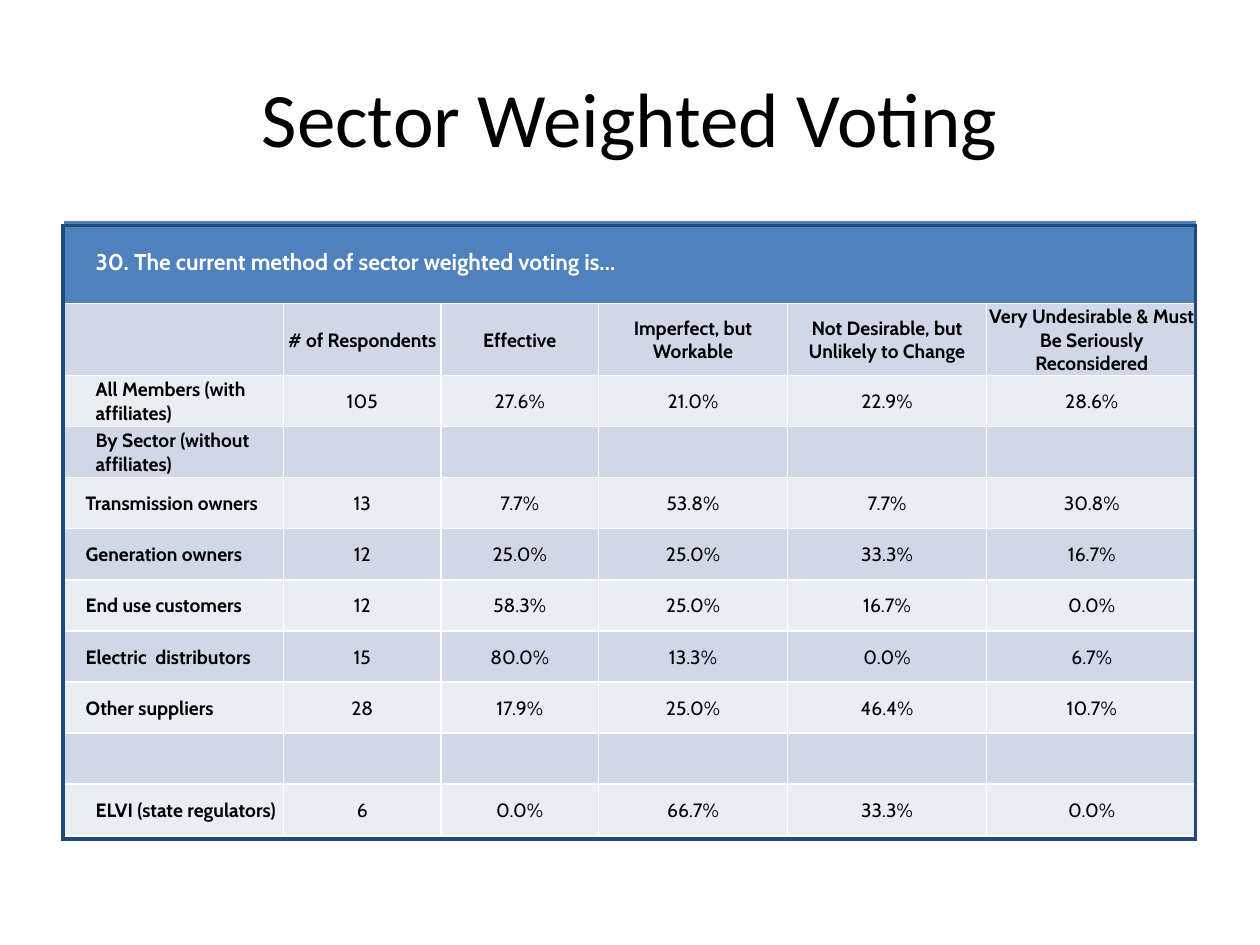
from lxml.etree import SubElement
from pptx import Presentation
from pptx.dml.color import RGBColor
from pptx.enum.text import MSO_ANCHOR as Anchor, PP_ALIGN as Align
from pptx.oxml.ns import qn
from pptx.util import Inches, Pt

BLACK = RGBColor(0x00, 0x00, 0x00)
WHITE = RGBColor(0xFF, 0xFF, 0xFF)
BLUE = RGBColor(0x4F, 0x81, 0xBD)
NAVY = RGBColor(0x1F, 0x49, 0x7D)
BANDS = [RGBColor(0xD0, 0xD8, 0xE8), RGBColor(0xE9, 0xED, 0xF4)]

QUESTION = "30. The current method of sector weighted voting is…"
HEADINGS = ["", "# of Respondents", "Effective", "Imperfect, but Workable",
            "Not Desirable, but Unlikely to Change",
            "Very Undesirable & Must Be Seriously Reconsidered"]
GROUP_INDENT, SECTOR_INDENT = 0.25, 0.17
RESULTS = [
    (GROUP_INDENT, "All Members (with affiliates)", "105", "27.6%", "21.0%", "22.9%", "28.6%"),
    (GROUP_INDENT, "By Sector (without affiliates)", "", "", "", "", ""),
    (SECTOR_INDENT, "Transmission owners", "13", "7.7%", "53.8%", "7.7%", "30.8%"),
    (SECTOR_INDENT, "Generation owners", "12", "25.0%", "25.0%", "33.3%", "16.7%"),
    (SECTOR_INDENT, "End use customers", "12", "58.3%", "25.0%", "16.7%", "0.0%"),
    (SECTOR_INDENT, "Electric  distributors", "15", "80.0%", "13.3%", "0.0%", "6.7%"),
    (SECTOR_INDENT, "Other suppliers", "28", "17.9%", "25.0%", "46.4%", "10.7%"),
    (GROUP_INDENT, "", "", "", "", "", ""),
    (GROUP_INDENT, "ELVI (state regulators)", "6", "0.0%", "66.7%", "33.3%", "0.0%"),
]
COLUMN_WIDTHS = [1.75, 1.25, 1.25, 1.5, 1.58, 1.67]
QUESTION_HEIGHT, HEADING_HEIGHT = 0.66, 0.57


def set_attributes(target, values):
    for name, value in values.items():
        setattr(target, name, value)


def write_text(frame, text, align, size, color, bold=False, font="Cabin"):
    paragraph = frame.paragraphs[0]
    paragraph.alignment = align
    run = paragraph.add_run()
    run.text = text
    set_attributes(run.font, {"name": font, "size": Pt(size), "bold": bold})
    run.font.color.rgb = color


def set_borders(cell, color, width):
    properties = cell._tc.get_or_add_tcPr()
    for side in ("lnL", "lnR", "lnT", "lnB"):
        line = SubElement(properties, qn(f"a:{side}"), w=str(Pt(width)))
        fill = SubElement(line, qn("a:solidFill"))
        SubElement(fill, qn("a:srgbClr"), val=str(color))


def format_cell(cell, border, width, fill=None):
    set_borders(cell, border, width)
    if fill is None:
        cell.fill.background()
    else:
        cell.fill.solid()
        cell.fill.fore_color.rgb = fill
    set_attributes(cell, {
        "margin_left": Inches(0.01), "margin_right": Inches(0.01),
        "margin_top": Inches(0.01), "margin_bottom": 0,
        "vertical_anchor": Anchor.MIDDLE})


def add_plain_table(slide, box, rows, columns):
    table = slide.shapes.add_table(rows, columns, *map(Inches, box)).table
    set_attributes(table, {"first_row": False, "horz_banding": False})
    return table


def add_title(slide, box):
    frame = slide.shapes.add_textbox(*map(Inches, box)).text_frame
    set_attributes(frame, {"word_wrap": True, "vertical_anchor": Anchor.MIDDLE})
    write_text(frame, "Sector Weighted Voting", Align.CENTER, 44, BLACK, font="Calibri")


def add_label(cell, text, indent, size, color):
    write_text(cell.text_frame, text, Align.LEFT, size, color, True)
    cell.text_frame.paragraphs[0]._p.get_or_add_pPr().set("marL", str(Inches(indent)))


def add_results_table(slide, box):
    table = add_plain_table(slide, box, len(RESULTS) + 2, len(HEADINGS))
    for column, width in zip(table.columns, COLUMN_WIDTHS):
        column.width = Inches(width)
    row_height = (box[3] - QUESTION_HEIGHT - HEADING_HEIGHT) / len(RESULTS)
    heights = [QUESTION_HEIGHT, HEADING_HEIGHT] + [row_height] * len(RESULTS)
    for index, (row, height) in enumerate(zip(table.rows, heights)):
        row.height = Inches(height)
        for cell in row.cells:
            format_cell(cell, WHITE, 1, BANDS[(index - 1) % 2] if index else BLUE)

    question = table.cell(0, 0)
    question.merge(table.cell(0, len(HEADINGS) - 1))
    add_label(question, QUESTION, GROUP_INDENT, 13, WHITE)
    for column, heading in enumerate(HEADINGS):
        write_text(table.cell(1, column).text_frame, heading, Align.CENTER, 11, BLACK, True)
    for row, (indent, label, *values) in enumerate(RESULTS, 2):
        add_label(table.cell(row, 0), label, indent, 11, BLACK)
        for column, value in enumerate(values, 1):
            write_text(table.cell(row, column).text_frame, value, Align.CENTER, 11, BLACK)


def add_frame(slide, box):
    table = add_plain_table(slide, box, 1, 1)
    format_cell(table.cell(0, 0), NAVY, 2.25)


def main():
    presentation = Presentation()
    set_attributes(presentation, {"slide_width": Inches(10), "slide_height": Inches(7.5)})
    slide = presentation.slides.add_slide(presentation.slide_layouts[6])
    add_title(slide, (0.5, 0.3, 9, 1.25))
    add_results_table(slide, (0.5, 1.75, 9, 4.88))
    add_frame(slide, (0.5, 1.79, 8.99, 4.87))
    presentation.save("out.pptx")


if __name__ == "__main__":
    main()
